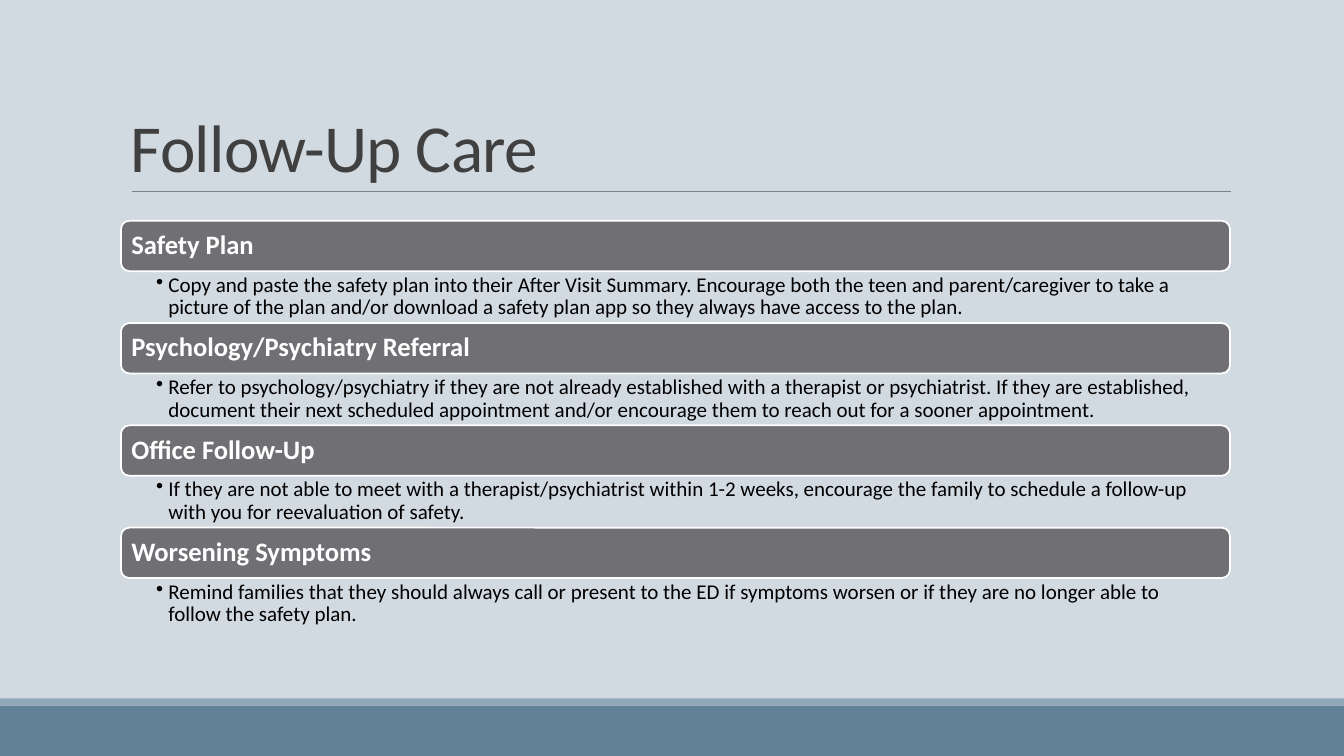
from pptx import Presentation
from pptx.dml.color import RGBColor
from pptx.enum import shapes, text
from pptx.oxml.ns import qn
from pptx.util import Inches, Pt

PALE = RGBColor(0xD1, 0xD9, 0xE1)
BLUE = RGBColor(0x61, 0x81, 0x97)
MIST = RGBColor(0x92, 0xA9, 0xB9)
RULE = RGBColor(0x80, 0x80, 0x80)
DARK = RGBColor(0x40, 0x40, 0x40)
GRAY = RGBColor(0x6F, 0x6F, 0x74)
WHITE = RGBColor(0xFF, 0xFF, 0xFF)
BLACK = RGBColor(0, 0, 0)

STEPS = [
    ("Safety Plan",
     "Copy and paste the safety plan into their After Visit Summary. "
     "Encourage both the teen and parent/caregiver to take a picture of the plan "
     "and/or download a safety plan app so they always have access to the plan."),
    ("Psychology/Psychiatry Referral",
     "Refer to psychology/psychiatry if they are not already established with a "
     "therapist or psychiatrist. If they are established, document their next "
     "scheduled appointment and/or encourage them to reach out for a sooner appointment."),
    ("Office Follow-Up",
     "If they are not able to meet with a therapist/psychiatrist within 1-2 weeks, "
     "encourage the family to schedule a follow-up with you for reevaluation of safety."),
    ("Worsening Symptoms",
     "Remind families that they should always call or present to the ED if symptoms "
     "worsen or if they are no longer able to follow the safety plan."),
]


def add_box(slide, kind, box, fill, edge=None):
    shape = slide.shapes.add_shape(kind, *map(Inches, box))
    shape.shadow.inherit = False
    shape.fill.solid()
    shape.fill.fore_color.rgb = fill
    if edge is None:
        shape.line.fill.background()
    else:
        shape.line.color.rgb = edge
        shape.line.width = Pt(1.25)
    return shape


def write(shape, words, size, color, pads, anchor, gap=0.9, bold=False):
    frame = shape.text_frame
    frame.word_wrap = True
    frame.vertical_anchor = anchor
    (frame.margin_left, frame.margin_top,
     frame.margin_right, frame.margin_bottom) = map(Inches, pads)
    para = frame.paragraphs[0]
    para.alignment = text.PP_ALIGN.LEFT
    para.line_spacing = gap
    run = para.add_run()
    run.text = words
    font = run.font
    font.name = "Calibri"
    font.size = Pt(size)
    font.bold = bold
    font.color.rgb = color
    return para


def add_bullet(para, indent):
    props = para._p.get_or_add_pPr()
    props.set("marL", str(Inches(indent)))
    props.set("indent", str(-Inches(indent)))
    mark = props.makeelement(qn("a:buChar"), {"char": "•"})
    props.append(mark)


def add_footer(slide, box):
    left, top, width, height = box
    rim = 0.07
    rect = shapes.MSO_SHAPE.RECTANGLE
    add_box(slide, rect, (left, top + rim, width, height - rim), BLUE)
    add_box(slide, rect, (left, top, width, rim), MIST)


def add_title(slide, box, words):
    left, top, width, height = box
    base = top + height
    ends = (left + 0.11, base, left + width + 0.01, base)
    line = slide.shapes.add_connector(
        shapes.MSO_CONNECTOR.STRAIGHT, *map(Inches, ends))
    line.line.color.rgb = RULE
    line.line.width = Pt(0.5)
    props = line._element.spPr
    props.append(props.makeelement(qn("a:effectLst"), {}))
    title = slide.shapes.add_textbox(*map(Inches, box))
    para = write(title, words, 48, DARK, (0.1, 0.05, 0.1, 0.05),
                 text.MSO_ANCHOR.BOTTOM, 0.85)
    para.runs[0].font._element.set("spc", "-50")


def add_steps(slide, box, steps):
    left, top, width, height = box
    pitch = height / len(steps)
    bar = 0.5
    for row, (head, body) in enumerate(steps):
        y = top + row * pitch
        label = add_box(slide, shapes.MSO_SHAPE.ROUNDED_RECTANGLE,
                        (left, y, width, bar), GRAY, WHITE)
        write(label, head, 19, WHITE, (0.08,) * 4,
              text.MSO_ANCHOR.MIDDLE, bold=True)
        note = slide.shapes.add_textbox(
            *map(Inches, (left, y + bar, width, pitch - bar)))
        para = write(note, body, 15, BLACK, (0.35, 0.03, 0.15, 0.03),
                     text.MSO_ANCHOR.TOP)
        add_bullet(para, 0.12)


def main():
    deck = Presentation()
    deck.slide_width = Inches(13.33)
    deck.slide_height = Inches(7.5)
    slide = deck.slides.add_slide(deck.slide_layouts[6])
    slide.background.fill.solid()
    slide.background.fill.fore_color.rgb = PALE
    add_footer(slide, (0, 6.93, 13.33, 0.57))
    add_title(slide, (1.2, 0.31, 11, 1.59), "Follow-Up Care")
    add_steps(slide, (1.2, 2.19, 11, 4.06), STEPS)
    deck.save("out.pptx")


if __name__ == "__main__":
    main()
